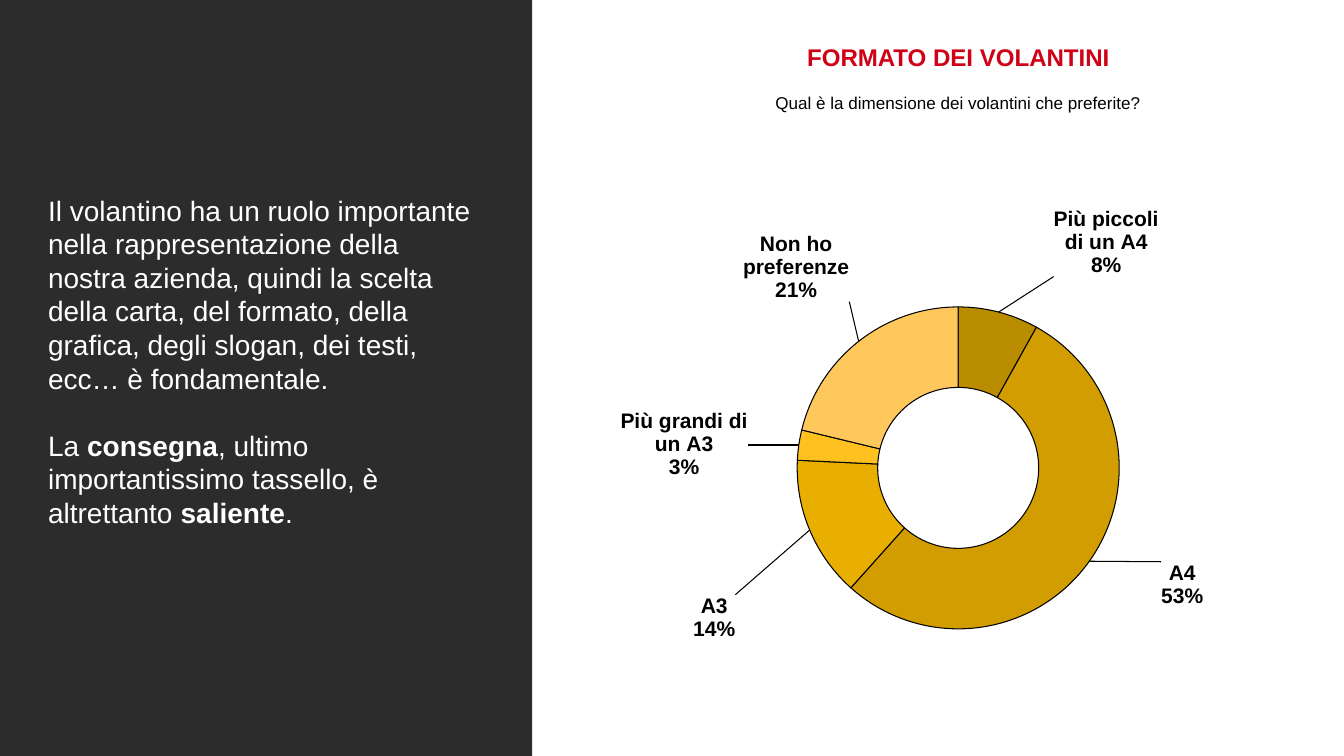
from copy import deepcopy
from dataclasses import dataclass
from math import cos, pi, sin

from lxml import etree
from pptx import Presentation, util as u
from pptx.chart.data import CategoryChartData
from pptx.dml.color import RGBColor
from pptx.enum import chart as ch, shapes, text
from pptx.oxml import parse_xml
from pptx.oxml.ns import nsdecls, qn

TITLE = "FORMATO DEI VOLANTINI"
QUESTION = "Qual è la dimensione dei volantini che preferite?"
MESSAGE = [
    [("Il volantino ha un ruolo importante nella rappresentazione della nostra "
      "azienda, quindi la scelta della carta, del formato, della grafica, degli "
      "slogan, dei testi, ecc… è fondamentale.", False)],
    [("La ", False), ("consegna", True),
     (", ultimo importantissimo tassello, è altrettanto ", False),
     ("saliente", True), (".", False)],
]
SLICES = [
    ("Più piccoli di un A4", 8, "BA8C00", (1106, 242)),
    ("A4", 53, "D19D00", (1182, 585)),
    ("A3", 14, "E8AF00", (714, 618)),
    ("Più grandi di un A3", 3, "FFC11F", (684, 444)),
    ("Non ho preferenze", 21, "FFC85D", (796, 267)),
]

PANEL = (-6, -9, 538, 775)
MESSAGE_BOX = (43, 188, 440, 380)
TITLE_BOX = (499, 39, 918, 39)
QUESTION_BOX = (499, 90, 918, 30)
CHART_BOX = (584, 99, 750, 750)
RING_CENTRE = (958, 468)
RING_RADIUS = 161
RING_MIDDLE = 0.75 * RING_RADIUS


@dataclass
class Theme:
    font: str = "Arial"
    panel: str = "2D2C2C"
    light: str = "FFFFFF"
    dark: str = "000000"
    accent: str = "D00017"
    title: float = 17.2
    question: float = 12.2
    message: int = 20
    leading: int = 24
    label: int = 15
    outline: float = 0.75


T = Theme()


def px(n):
    return u.Emu(round(n * 914400 / 100.8))


def box(rect):
    return [px(n) for n in rect]


def style(font, size, color, bold=None):
    font.name, font.size, font.bold = T.font, u.Pt(size), bold
    font.color.rgb = RGBColor.from_string(color)


def frame(s, anchor=text.MSO_ANCHOR.TOP):
    tf = s.text_frame
    tf.word_wrap = True
    tf.auto_size = text.MSO_AUTO_SIZE.NONE
    tf.vertical_anchor = anchor
    tf.margin_left = tf.margin_right = tf.margin_top = tf.margin_bottom = px(5)
    return tf


def heading(tf, words, size, color, bold, before):
    p = tf.paragraphs[0]
    p.text = words
    p.alignment = text.PP_ALIGN.CENTER
    p.line_spacing = 0.9
    p.space_before = u.Pt(before)
    style(p.font, size, color, bold)


def add_message(s):
    tf = frame(s.shapes.add_textbox(*box(MESSAGE_BOX)))
    for i, runs in enumerate(MESSAGE):
        p = tf.add_paragraph() if i else tf.paragraphs[0]
        p.line_spacing = u.Pt(T.leading)
        p.space_before = u.Pt(T.leading if i else 0)
        style(p.font, T.message, T.light)
        for words, bold in runs:
            r = p.add_run()
            r.text = words
            style(r.font, T.message, T.light, bold)


def place_labels(labels):
    group = labels._element
    shared = [group.find(qn(tag)) for tag in ("c:numFmt", "c:txPr")]
    shared[1].find(qn("a:bodyPr")).set("wrap", "square")
    total = sum(value for _, value, _, _ in SLICES)
    start = 0
    for i, (_, value, _, (cx, cy)) in enumerate(SLICES):
        angle = 2 * pi * (start + value / 2) / total
        start += value
        dx = (cx - RING_CENTRE[0] - RING_MIDDLE * sin(angle)) / CHART_BOX[2]
        dy = (cy - RING_CENTRE[1] + RING_MIDDLE * cos(angle)) / CHART_BOX[3]
        label = parse_xml(
            f'<c:dLbl {nsdecls("c")}><c:idx val="{i}"/><c:layout><c:manualLayout>'
            f'<c:x val="{dx:.4f}"/><c:y val="{dy:.4f}"/></c:manualLayout></c:layout>'
            '<c:showLegendKey val="0"/><c:showVal val="1"/><c:showCatName val="1"/>'
            '<c:showSerName val="0"/><c:showPercent val="0"/><c:showBubbleSize val="0"/>'
            '<c:separator>\n</c:separator></c:dLbl>')
        for offset, part in enumerate(shared):
            label.insert(2 + offset, deepcopy(part))
        group.insert(i, label)
    for tag in ("c:separator", "c:showLeaderLines", "c:leaderLines"):
        for old in group.findall(qn(tag)):
            group.remove(old)
    etree.SubElement(group, qn("c:separator")).text = "\n"
    etree.SubElement(group, qn("c:showLeaderLines")).set("val", "1")
    group.append(parse_xml(
        f'<c:leaderLines {nsdecls("c", "a")}><c:spPr><a:ln w="9525"><a:solidFill>'
        f'<a:srgbClr val="{T.dark}"/></a:solidFill></a:ln></c:spPr></c:leaderLines>'))


def add_ring(s):
    data = CategoryChartData()
    data.categories = [name for name, _, _, _ in SLICES]
    data.add_series("Series 1", [value for _, value, _, _ in SLICES])
    chart = s.shapes.add_chart(ch.XL_CHART_TYPE.DOUGHNUT, *box(CHART_BOX), data).chart
    chart.has_legend = chart.has_title = False
    style(chart.font, T.label, T.dark)
    plot = chart.plots[0]
    plot.vary_by_categories = False
    plot._element.find(qn("c:holeSize")).set("val", "60")
    series = plot.series[0]
    for i, (_, _, color, _) in enumerate(SLICES):
        fmt = series.points[i].format
        fmt.fill.solid()
        fmt.fill.fore_color.rgb = RGBColor.from_string(color)
        fmt.line.color.rgb = RGBColor.from_string(T.dark)
        fmt.line.width = u.Pt(T.outline)
    labels = series.data_labels
    labels.show_value = labels.show_category_name = True
    labels.show_percentage = False
    labels.number_format = '0"%"'
    labels.number_format_is_linked = False
    style(labels.font, T.label, T.dark, True)
    place_labels(labels)

    area = chart._chartSpace.chart.plotArea
    for old in area.findall(qn("c:layout")):
        area.remove(old)
    rect = (RING_CENTRE[0] - RING_RADIUS - CHART_BOX[0],
            RING_CENTRE[1] - RING_RADIUS - CHART_BOX[1],
            2 * RING_RADIUS, 2 * RING_RADIUS)
    sizes = "".join(f'<c:{k} val="{n / CHART_BOX[2]:.4f}"/>' for k, n in zip("xywh", rect))
    area.insert(0, parse_xml(
        f'<c:layout {nsdecls("c")}><c:manualLayout><c:layoutTarget val="inner"/>'
        f'<c:xMode val="edge"/><c:yMode val="edge"/>{sizes}</c:manualLayout></c:layout>'))


def main():
    prs = Presentation()
    prs.slide_width, prs.slide_height = u.Inches(13.33), u.Inches(7.5)
    s = prs.slides.add_slide(prs.slide_layouts[5])

    panel = s.shapes.add_shape(shapes.MSO_SHAPE.RECTANGLE, *box(PANEL))
    panel.shadow.inherit = False
    panel.fill.solid()
    panel.fill.fore_color.rgb = RGBColor.from_string(T.panel)
    panel.line.fill.background()

    add_ring(s)
    add_message(s)

    title = s.shapes.title
    title.left, title.top, title.width, title.height = box(TITLE_BOX)
    heading(frame(title, text.MSO_ANCHOR.MIDDLE), TITLE, T.title, T.accent, True, 0)
    question = s.shapes.add_textbox(*box(QUESTION_BOX))
    heading(frame(question), QUESTION, T.question, T.dark, False, 3)

    prs.save("out.pptx")


if __name__ == "__main__":
    main()
